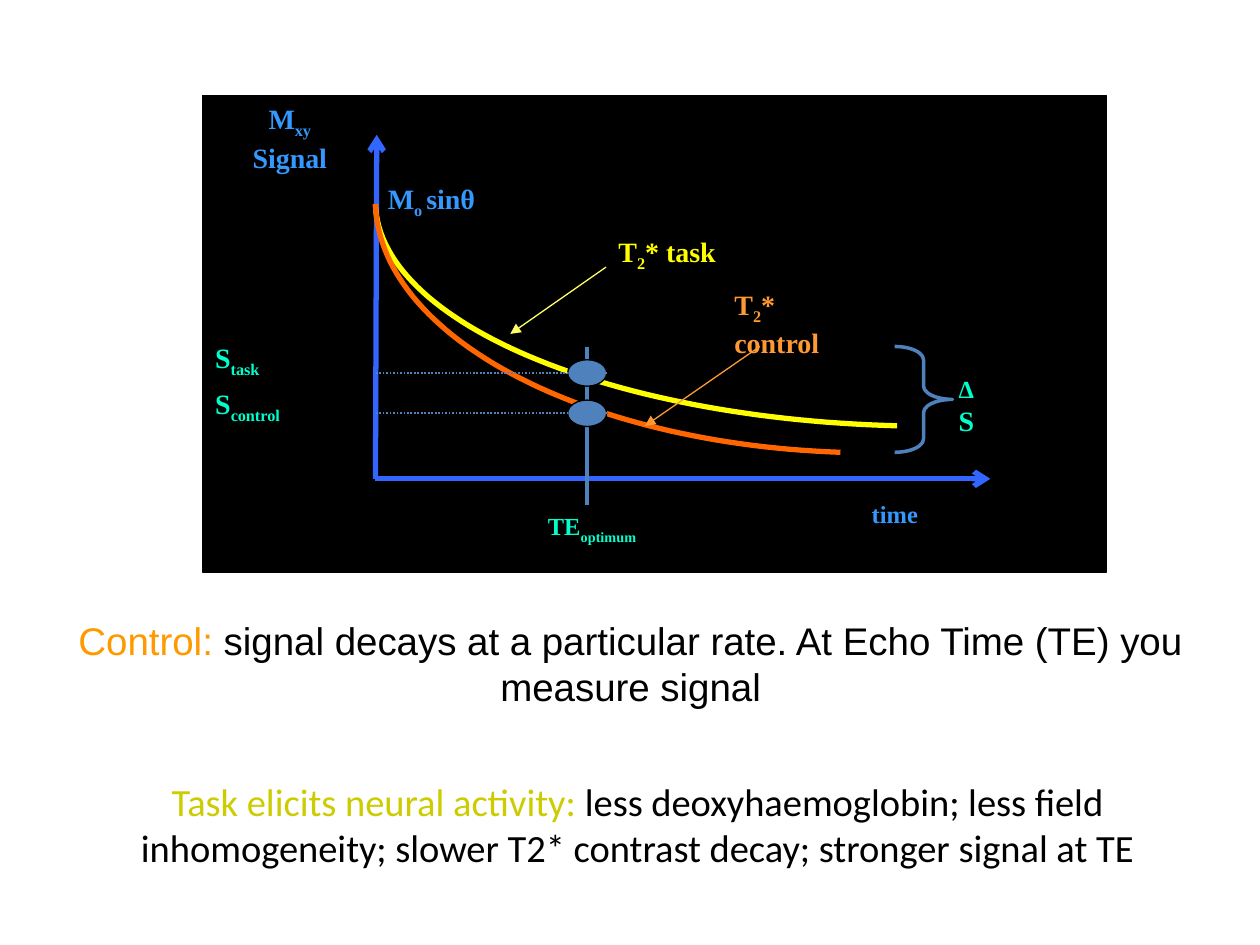
from pptx import Presentation
from pptx.dml.color import RGBColor
from pptx.enum.dml import MSO_LINE
from pptx.enum.shapes import MSO_CONNECTOR, MSO_SHAPE
from pptx.enum.text import MSO_ANCHOR, PP_ALIGN
from pptx.oxml.ns import qn
from pptx.util import Inches, Pt
from lxml import etree

STRAIGHT = MSO_CONNECTOR.STRAIGHT
RECT, OVAL, BRACE = MSO_SHAPE.RECTANGLE, MSO_SHAPE.OVAL, MSO_SHAPE.RIGHT_BRACE
DOTS = MSO_LINE.ROUND_DOT
LEFT, MID = PP_ALIGN.LEFT, PP_ALIGN.CENTER
TOP, CENTER = MSO_ANCHOR.TOP, MSO_ANCHOR.MIDDLE

THEME = {
    "black": "000000", "axis": "3366FF", "label": "3399FF", "steel": "4F81BD",
    "mint": "00FFCC", "task": "FFFF00", "pale": "FFFF66", "control": "FF6600",
    "orange": "FF9933", "amber": "FF9900", "olive": "CCCC00",
    "serif": "Times New Roman", "sans": "Arial", "body": "Calibri",
    "small": 14, "mid": 16, "big": 22,
}

PANEL = (1.61, 0.76, 7.17, 3.78)
X0, Y0 = 2.98, 3.8          # where the axes meet
TE = 4.66                   # echo time
LEVELS = (3.28, 2.96)       # control and task signal at TE
DOT = (0.31, 0.21)

# Bezier control points of each decay curve
CURVES = [
    ("task", [(X0, 1.62), (3.01, 2.55), (4.81, 3.32), (7.12, 3.38)]),
    ("control", [(X0, 1.62), (3.01, 2.66), (4.61, 3.52), (6.67, 3.59)]),
]
# start, end, colour, width, arrowhead
AXES = [
    ((X0, Y0), (2.99, 1.07), "axis", 3, "arrow"),
    ((X0, Y0), (7.86, Y0), "axis", 3, "arrow"),
]
POINTERS = [
    ((4.81, 2.12), (4.05, 2.65), "pale", 0.75, "triangle"),
    ((6.03, 2.75), (5.12, 3.38), "orange", 0.75, "triangle"),
    ((TE, 2.75), (TE, 4.01), "steel", 2.25, None),
]
# box, colour, size, alignment, wrap, paragraphs; "_" starts a subscript run
LABELS = [
    ((6.82, 3.91, 0.57, 0.33), "label", "small", LEFT, False, [["time"]]),
    ((1.46, 0.76, 1.68, 0.63), "label", "mid", MID, True,
     [["M", "_xy"], ["Signal"]]),
    ((2.98, 1.39, 1.83, 0.37), "label", "mid", LEFT, True,
     [["M", "_o ", "sinθ"]]),
    ((4.81, 1.81, 2.02, 0.37), "task", "mid", LEFT, True,
     [["T", "_2", "* task"]]),
    ((5.73, 2.23, 1.15, 0.63), "orange", "mid", LEFT, True,
     [["T", "_2", "* control"]]),
    ((4.25, 4.01, 0.95, 0.33), "mint", "small", LEFT, False,
     [["TE", "_optimum"]]),
    ((1.61, 2.65, 0.6, 0.37), "mint", "mid", LEFT, False, [["S", "_task"]]),
    ((1.61, 3.02, 0.79, 0.37), "mint", "mid", LEFT, False,
     [["S", "_control"]]),
    ((7.51, 2.92, 0.44, 0.37), "mint", "mid", LEFT, False, [["Δ", "S"]]),
]
# box, font, anchor, lead colour, lead, rest
NOTES = [
    ((0.27, 4.85, 9.47, 0.84), "sans", TOP, "amber", "Control: ",
     "signal decays at a particular rate. "
     "At Echo Time (TE) you measure signal"),
    ((0.42, 6.03, 9.28, 1.02), "body", CENTER, "olive",
     "Task elicits neural activity: ",
     "less deoxyhaemoglobin; less field inhomogeneity; "
     "slower T2* contrast decay; stronger signal at TE"),
]


def color(name):
    return RGBColor.from_string(THEME[name])


def stroke(shape, name, width):
    shape.line.color.rgb = color(name)
    shape.line.width = Pt(width)


def add_shape(slide, kind, box, fill, line, width):
    shape = slide.shapes.add_shape(kind, *map(Inches, box))
    shape.shadow.inherit = False
    if fill:
        shape.fill.solid()
        shape.fill.fore_color.rgb = color(fill)
    else:
        shape.fill.background()
    stroke(shape, line, width)
    return shape


def add_line(slide, start, end, name, width, head=None, dash=None):
    line = slide.shapes.add_connector(STRAIGHT, *map(Inches, start + end))
    stroke(line, name, width)
    if dash:
        line.line.dash_style = dash
    if head:
        tail = etree.SubElement(line.line._get_or_add_ln(), qn("a:tailEnd"))
        tail.set("type", head)
    etree.SubElement(line._element.spPr, qn("a:effectLst"))


def add_curve(slide, name, points, steps=60):
    """Draw a cubic Bezier as a fine open polyline."""
    def at(t):
        u = 1 - t
        parts = (u ** 3, 3 * u * u * t, 3 * u * t * t, t ** 3)
        return tuple(Inches(sum(w * p[i] for w, p in zip(parts, points)))
                     for i in (0, 1))

    path = [at(n / steps) for n in range(steps + 1)]
    form = slide.shapes.build_freeform(*path[0])
    form.add_line_segments(path[1:], close=False)
    curve = form.convert_to_shape()
    curve.shadow.inherit = False
    curve.fill.background()
    stroke(curve, name, 3)


def add_box(slide, box, wrap=True, anchor=TOP):
    frame = slide.shapes.add_textbox(*map(Inches, box)).text_frame
    frame.word_wrap = wrap
    frame.vertical_anchor = anchor
    return frame


def add_run(para, text, face, size, name, bold=False):
    run = para.add_run()
    run.text = text
    run.font.name = THEME[face]
    run.font.size = Pt(THEME[size])
    run.font.color.rgb = color(name)
    run.font.bold = bold
    return run


def add_label(slide, box, name, size, align, wrap, paras):
    frame = add_box(slide, box, wrap)
    for i, parts in enumerate(paras):
        para = frame.add_paragraph() if i else frame.paragraphs[0]
        para.alignment = align
        for part in parts:
            pt = "small" if part == "Δ" else size
            run = add_run(para, part.lstrip("_"), "serif", pt, name, True)
            if part.startswith("_"):
                run.font._element.set("baseline", "-25000")


def add_note(slide, box, face, anchor, name, lead, rest):
    para = add_box(slide, box, anchor=anchor).paragraphs[0]
    para.alignment = MID
    add_run(para, lead, face, "big", name)
    add_run(para, rest, face, "big", "black")


def main():
    deck = Presentation()
    deck.slide_width, deck.slide_height = Inches(10), Inches(7.5)
    slide = deck.slides.add_slide(deck.slide_layouts[6])

    add_shape(slide, RECT, PANEL, "black", "black", 0.75)
    for axis in AXES:
        add_line(slide, *axis)
    for curve in CURVES:
        add_curve(slide, *curve)
    for label in LABELS:
        add_label(slide, *label)
    for pointer in POINTERS:
        add_line(slide, *pointer)
    wide, high = DOT
    for y in LEVELS:
        box = (TE - wide / 2, y - high / 2, wide, high)
        add_shape(slide, OVAL, box, "steel", "black", 0.75)
        add_line(slide, (TE + wide / 2, y), (X0, y), "steel", 1, dash=DOTS)
    brace = add_shape(slide, BRACE, (7.1, 2.75, 0.46, 0.84), None, "steel", 2)
    brace.adjustments[0] = 0.23
    for note in NOTES:
        add_note(slide, *note)
    deck.save("out.pptx")


if __name__ == "__main__":
    main()
